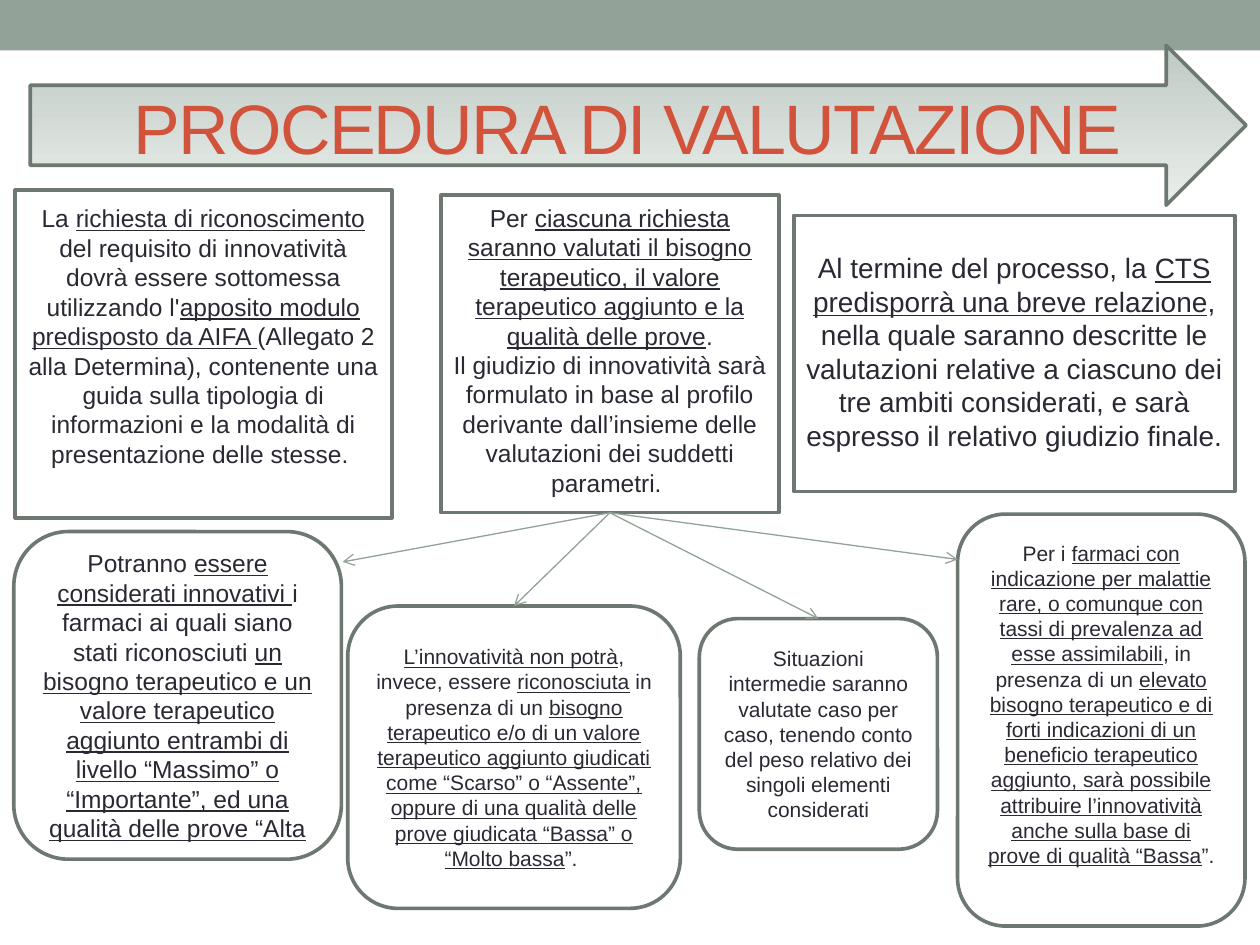
from dataclasses import dataclass

from lxml import etree
from pptx import Presentation
from pptx.dml.color import RGBColor
from pptx.enum.shapes import MSO_CONNECTOR as CONN, MSO_SHAPE as SHAPE
from pptx.enum.text import MSO_ANCHOR as ANCHOR, PP_ALIGN as ALIGN
from pptx.oxml.ns import qn
from pptx.util import Pt

SAGE = RGBColor(0x93, 0xA2, 0x99)
BORDER = RGBColor(0x6D, 0x78, 0x71)
ARROW_TOP = RGBColor(0xBF, 0xCA, 0xC3)
ARROW_BOTTOM = RGBColor(0xEB, 0xEE, 0xEC)
WHITE = RGBColor(0xFF, 0xFF, 0xFF)
RED = RGBColor(0xD2, 0x53, 0x3C)
INK = RGBColor(0x29, 0x29, 0x34)
BOTTOM, TOP = 2, 0


@dataclass
class Box:
    """A bordered text box; underscores in the text switch underlining."""
    left: float
    top: float
    width: float
    height: float
    size: int
    paragraphs: list[str]
    kind: SHAPE = SHAPE.RECTANGLE
    bottom_inset: float = 3.6


REQUEST = Box(8.6, 108.7, 215.3, 187.2, 14, [
    "La _richiesta di riconoscimento _del requisito di innovatività dovrà essere "
    "sottomessa utilizzando l'_apposito modulo predisposto da AIFA _(Allegato 2 alla "
    "Determina), contenente una guida sulla tipologia di informazioni e la modalità "
    "di presentazione delle stesse. "], bottom_inset=24.3)
CRITERIA = Box(252, 111.6, 193, 181.4, 14, [
    "Per _ciascuna richiesta saranno valutati il bisogno terapeutico, il valore "
    "terapeutico aggiunto e la qualità delle prove_.",
    "Il giudizio di innovatività sarà formulato in base al profilo derivante "
    "dall’insieme delle valutazioni dei suddetti parametri. "], bottom_inset=8.2)
REPORT = Box(453.6, 123.1, 252, 157.7, 16, [
    "Al termine del processo, la _CTS predisporrà una breve relazione_, nella quale "
    "saranno descritte le valutazioni relative a ciascuno dei tre ambiti considerati, "
    "e sarà espresso il relativo giudizio finale. "], bottom_inset=5.9)
INNOVATIVE = Box(7.9, 303.8, 187.2, 187.2, 14, [
    "Potranno _essere considerati innovativi _i farmaci ai quali siano stati "
    "riconosciuti _un bisogno terapeutico e un valore terapeutico aggiunto entrambi "
    "di livello “Massimo” o “Importante”, ed una qualità delle prove “Alta_"],
    SHAPE.ROUNDED_RECTANGLE)
NOT_INNOVATIVE = Box(198.7, 346.3, 190.1, 172.8, 12, [
    "_L’innovatività non potrà_, invece, essere _riconosciuta_ in presenza di un "
    "_bisogno terapeutico e/o di un valore terapeutico aggiunto giudicati come "
    "“Scarso” o “Assente”, oppure di una qualità delle prove giudicata “Bassa” o "
    "“Molto bassa_”. "], SHAPE.ROUNDED_RECTANGLE)
INTERMEDIATE = Box(399.6, 353.5, 136.1, 131.8, 12, [
    "Situazioni intermedie saranno valutate caso per caso, tenendo conto del peso "
    "relativo dei singoli elementi considerati"], SHAPE.ROUNDED_RECTANGLE)
RARE = Box(547.2, 293.8, 164.2, 235.4, 12, [
    "Per i _farmaci con indicazione per malattie rare, o comunque con tassi di "
    "prevalenza ad esse assimilabili_, in presenza di un _elevato bisogno terapeutico "
    "e di forti indicazioni di un beneficio terapeutico aggiunto, sarà possibile "
    "attribuire l’innovatività anche sulla base di prove di qualità “Bassa_”."],
    SHAPE.ROUNDED_RECTANGLE, bottom_inset=22)


def add_run(p, text: str, size: float, color: RGBColor, underline: bool = False):
    r = p.add_run()
    r.text = text
    formats = {"name": "Arial", "size": Pt(size), "underline": underline}
    for name, value in formats.items():
        setattr(r.font, name, value)
    r.font.color.rgb = color
    return r


def add_preset(s, kind: SHAPE, left: float, top: float, width: float, height: float,
               fill: RGBColor, border: bool = True):
    sp = s.shapes.add_shape(kind, Pt(left), Pt(top), Pt(width), Pt(height))
    sp.shadow.inherit = False
    sp.fill.solid()
    sp.fill.fore_color.rgb = fill
    if border:
        sp.line.color.rgb = BORDER
        sp.line.width = Pt(2.08)
    else:
        sp.line.fill.background()
    return sp


def add_box(s, box: Box):
    sp = add_preset(s, box.kind, box.left, box.top, box.width, box.height, WHITE)
    tf = sp.text_frame
    formats = {"word_wrap": True, "vertical_anchor": ANCHOR.MIDDLE,
               "margin_bottom": Pt(box.bottom_inset)}
    for name, value in formats.items():
        setattr(tf, name, value)
    for i, paragraph in enumerate(box.paragraphs):
        p = tf.paragraphs[0] if i == 0 else tf.add_paragraph()
        p.alignment = ALIGN.CENTER
        for j, part in enumerate(paragraph.split("_")):
            if part:
                add_run(p, part, box.size, INK, underline=j % 2 == 1)
    return sp


def add_arrow(s, source, x: float, y: float, target=None) -> None:
    """Arrow from the bottom of source to a point, or to the top of target."""
    line = s.shapes.add_connector(CONN.STRAIGHT, 0, 0, Pt(x), Pt(y))
    line.begin_connect(source, BOTTOM)
    if target is not None:
        line.end_connect(target, TOP)
    line.line.color.rgb = SAGE
    line.line.width = Pt(0.75)
    etree.SubElement(line.line._get_or_add_ln(), qn("a:tailEnd"), type="arrow")
    etree.SubElement(line._element.spPr, qn("a:effectLst"))


def main() -> None:
    prs = Presentation()
    prs.slide_width, prs.slide_height = Pt(720), Pt(540)
    s = prs.slides.add_slide(prs.slide_layouts[6])

    # Top band and title arrow
    add_preset(s, SHAPE.RECTANGLE, 0, 0, 720, 28.8, SAGE, border=False)
    arrow = add_preset(s, SHAPE.RIGHT_ARROW, 17.3, 25.9, 694.8, 91.4, ARROW_TOP)
    arrow.fill.gradient()
    arrow.fill.gradient_angle = 270
    for stop, color in zip(arrow.fill.gradient_stops, (ARROW_TOP, ARROW_BOTTOM)):
        stop.color.rgb = color

    # Title
    tf = s.shapes.add_textbox(Pt(34.6), Pt(33.1), Pt(648), Pt(77.8)).text_frame
    tf.word_wrap = True
    tf.vertical_anchor = ANCHOR.MIDDLE
    p = tf.paragraphs[0]
    p.alignment = ALIGN.CENTER
    r = add_run(p, "PROCEDURA DI VALUTAZIONE", 40, RED)
    r.font._element.set("spc", "-100")

    # Procedure steps and possible outcomes
    add_box(s, REQUEST)
    criteria = add_box(s, CRITERIA)
    add_box(s, INNOVATIVE)
    not_innovative = add_box(s, NOT_INNOVATIVE)
    intermediate = add_box(s, INTERMEDIATE)
    add_box(s, REPORT)
    add_box(s, RARE)

    # Arrows from the criteria to the outcomes
    add_arrow(s, criteria, 195.8, 321.1)
    add_arrow(s, criteria, 293.8, 346.3, not_innovative)
    add_arrow(s, criteria, 467.6, 353.5, intermediate)
    add_arrow(s, criteria, 547.2, 319.7)

    prs.save("out.pptx")


if __name__ == "__main__":
    main()
